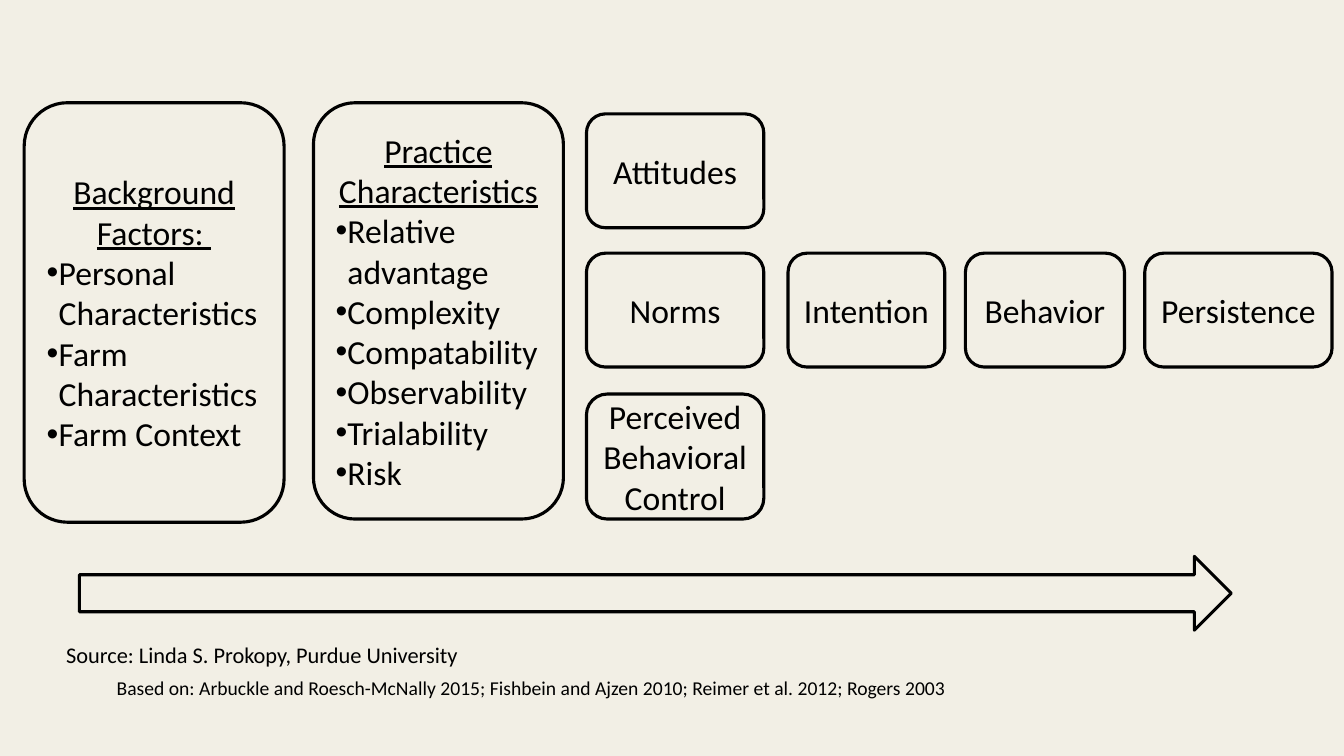
from lxml.etree import SubElement
from pptx import Presentation
from pptx.dml.color import RGBColor
from pptx.enum.shapes import MSO_SHAPE as Shape
from pptx.enum.text import MSO_ANCHOR as Anchor, PP_ALIGN as Align
from pptx.oxml.ns import qn
from pptx.util import Cm, Pt

CREAM = RGBColor(0xF2, 0xEF, 0xE5)
BLACK = RGBColor(0x00, 0x00, 0x00)
FONT = "Calibri"
BULLET_INDENT = Cm(0.3)

# Tall boxes: left, width, height, heading, bullet items
FACTOR_BOXES = [
    (0.61, 6.55, 10.57, "Background Factors: ",
     ["Personal Characteristics", "Farm Characteristics", "Farm Context"]),
    (7.9, 6.3, 10.49, "Practice Characteristics",
     ["Relative advantage", "Complexity", "Compatability",
      "Observability", "Trialability", "Risk"]),
]
FACTOR_TOP = 2.59

# Belief column: top, height, label
BELIEFS = [
    (2.87, 2.87, "Attitudes"),
    (6.38, 2.87, "Norms"),
    (9.93, 3.15, "Perceived Behavioral Control"),
]
BELIEF_LEFT, BELIEF_WIDTH = 14.78, 4.47

# Outcome row: left, width, label
OUTCOMES = [
    (19.86, 3.95, "Intention"),
    (24.33, 4.01, "Behavior"),
    (28.85, 4.72, "Persistence"),
]
OUTCOME_TOP, OUTCOME_HEIGHT = 6.38, 2.87


def add_span(para, text, size=24, underline=False):
    span = para.add_run()
    span.text = text
    span.font.name = FONT
    span.font.size = Pt(size)
    span.font.color.rgb = BLACK
    span.font.underline = underline


def add_outlined(page, kind, left, top, width, height):
    box = page.shapes.add_shape(kind, Cm(left), Cm(top), Cm(width), Cm(height))
    box.shadow.inherit = False
    box.fill.solid()
    box.fill.fore_color.rgb = CREAM
    box.line.color.rgb = BLACK
    box.line.width = Pt(2.25)
    return box


def add_box(page, left, top, width, height, title, underline=False):
    box = add_outlined(page, Shape.ROUNDED_RECTANGLE, left, top, width, height)
    frame = box.text_frame
    frame.word_wrap = True
    frame.vertical_anchor = Anchor.MIDDLE
    para = frame.paragraphs[0]
    para.alignment = Align.CENTER
    add_span(para, title, underline=underline)
    return frame


def add_bullet(frame, text):
    para = frame.add_paragraph()
    para.alignment = Align.LEFT
    props = para._p.get_or_add_pPr()
    props.set("marL", str(BULLET_INDENT))
    props.set("indent", str(-BULLET_INDENT))
    SubElement(props, qn("a:buFont"), typeface="Arial")
    SubElement(props, qn("a:buChar"), char="•")
    add_span(para, text)


def add_note(page, left, top, width, height, text, size, wrap):
    note = page.shapes.add_textbox(Cm(left), Cm(top), Cm(width), Cm(height))
    note.text_frame.word_wrap = wrap
    add_span(note.text_frame.paragraphs[0], text, size)


def main():
    deck = Presentation()
    deck.slide_width, deck.slide_height = Cm(33.87), Cm(19.05)
    page = deck.slides.add_slide(deck.slide_layouts[6])
    page.background.fill.solid()
    page.background.fill.fore_color.rgb = CREAM

    # Factors with bullet lists
    for left, width, height, heading, items in FACTOR_BOXES:
        frame = add_box(page, left, FACTOR_TOP, width, height, heading, True)
        for item in items:
            add_bullet(frame, item)

    # Beliefs, then the outcomes they lead to
    for top, height, label in BELIEFS:
        add_box(page, BELIEF_LEFT, top, BELIEF_WIDTH, height, label)
    for left, width, label in OUTCOMES:
        add_box(page, left, OUTCOME_TOP, width, OUTCOME_HEIGHT, label)

    # Direction of the process
    add_outlined(page, Shape.RIGHT_ARROW, 2, 14.02, 29.03, 1.86)

    # Sources
    add_note(page, 1.42, 16.03, 10.52, 0.94,
             "Source: Linda S. Prokopy, Purdue University", 16, False)
    add_note(page, 2.69, 16.92, 21.64, 0.86,
             "Based on: Arbuckle and Roesch-McNally 2015; Fishbein and Ajzen 2010; "
             "Reimer et al. 2012; Rogers 2003", 14, True)

    deck.save("out.pptx")


if __name__ == "__main__":
    main()
